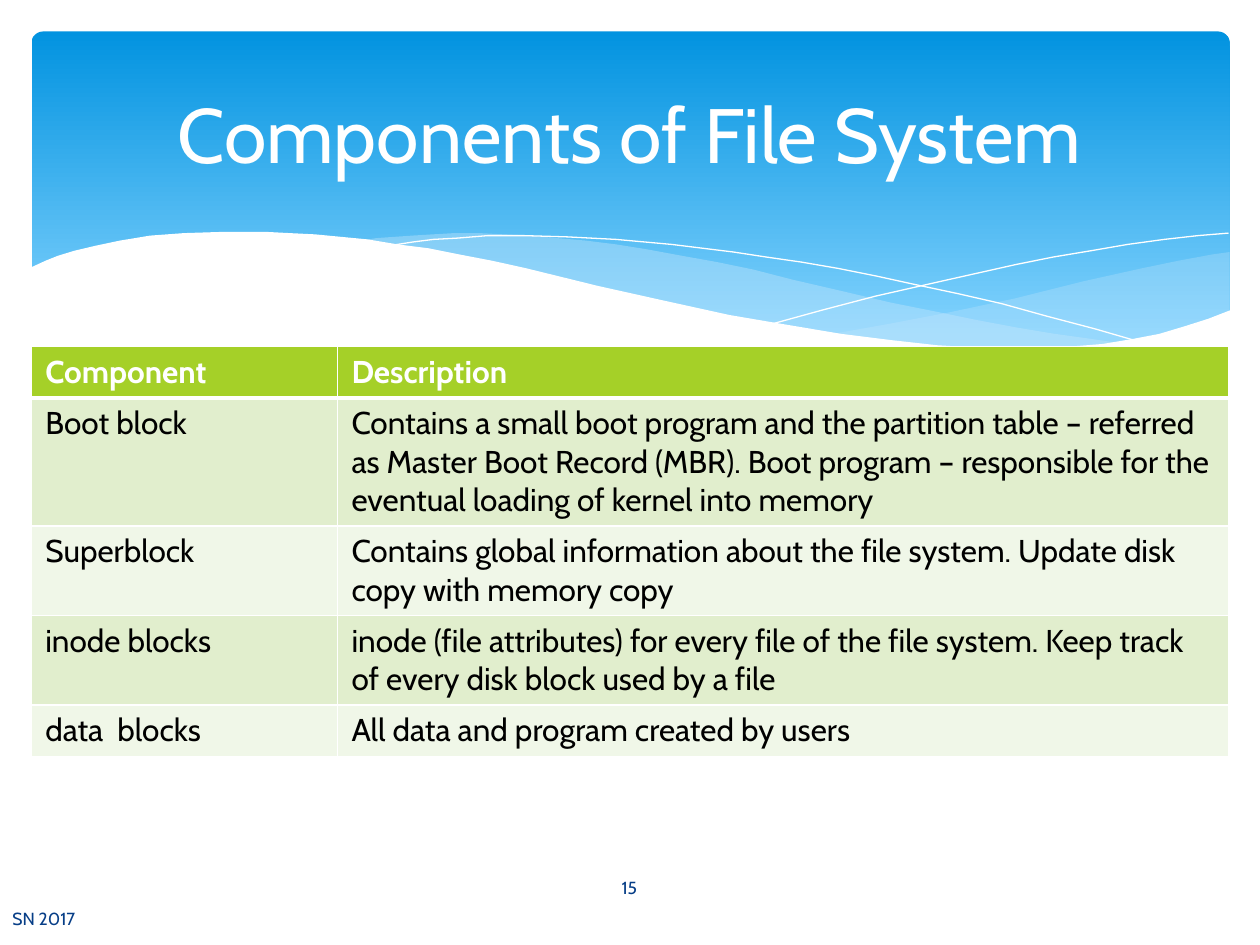
from lxml.etree import SubElement
from pptx import Presentation
from pptx.dml.color import RGBColor
from pptx.enum.shapes import MSO_SHAPE
from pptx.enum.text import MSO_ANCHOR, PP_ALIGN
from pptx.oxml import parse_xml
from pptx.oxml.ns import nsdecls, qn
from pptx.util import Inches, Pt

THEME = {
    "font": "Cabin",
    "sky_top": "0293E0", "sky_bottom": "83D3FE", "mist": "C6E7FC",
    "white": "FFFFFF", "ink": "000000", "footer": "073E87",
    "header": "A5D028", "bands": ("E1EECD", "F0F7E8"),
    "title_size": 44, "table_size": 18, "footer_size": 10,
}

TITLE = "Components of File System"
PAGE_NUMBER = "15"
FOOTER = "SN 2017"
COMPONENTS = [
    ("Component", "Description"),
    ("Boot block", "Contains a small boot program and the partition table – referred as Master "
     "Boot Record (MBR). Boot program – responsible for the eventual loading of kernel into memory"),
    ("Superblock", "Contains global information about the file system. "
     "Update disk copy with memory copy"),
    ("inode blocks", "inode (file attributes) for every file of the file system. "
     "Keep track of every disk block used by a file"),
    ("data  blocks", "All data and program created by users"),
]
COLUMN_WIDTHS = (2.43, 7.07)
ROW_HEIGHT = 0.41

RIGHT_MIST = [
    (9.76, 2), (9.62, 2.02), (9.35, 2.07), (9.06, 2.13), (8.61, 2.23), (8.05, 2.37),
    (7.53, 2.48), (7.06, 2.57), (6.61, 2.65), (6.91, 2.69), (7.19, 2.72), (7.45, 2.75),
    (7.69, 2.77), (8.03, 2.78), (8.24, 2.77), (8.54, 2.76), (8.81, 2.73), (9.05, 2.69),
    (9.28, 2.63), (9.49, 2.57), (9.63, 2.52), (9.76, 2.47),
]
MIDDLE_MIST = [
    (8.93, 2.73), (8.66, 2.69), (8.37, 2.65), (8.07, 2.6), (7.75, 2.54), (7.41, 2.47),
    (7.06, 2.4), (6.68, 2.31), (6.29, 2.22), (5.98, 2.14), (5.69, 2.08), (5.41, 2.03),
    (5.14, 1.98), (4.89, 1.94), (4.65, 1.91), (4.42, 1.89), (4.2, 1.87), (3.99, 1.86),
    (3.8, 1.85), (3.61, 1.85), (3.28, 1.87), (2.99, 1.89), (2.86, 1.91), (3.23, 1.96),
    (3.62, 2.03), (4.04, 2.11), (4.49, 2.22), (4.91, 2.32), (5.3, 2.4), (5.66, 2.48),
    (6.01, 2.55), (6.34, 2.61), (6.65, 2.66), (6.95, 2.7), (7.22, 2.74), (7.48, 2.76),
    (7.85, 2.78), (8.18, 2.78), (8.48, 2.77), (8.76, 2.75),
]
FALLING_LINE = [
    (3.09, 1.95), (3.28, 1.92), (3.44, 1.9), (3.63, 1.89), (3.87, 1.87), (4.16, 1.87),
    (4.5, 1.88), (4.89, 1.9), (5.33, 1.94), (5.82, 2), (6.08, 2.04), (6.36, 2.08),
    (6.65, 2.13), (6.95, 2.19), (7.27, 2.26), (7.6, 2.33), (7.95, 2.41), (8.31, 2.51),
    (8.69, 2.61), (9.07, 2.72),
]
RISING_LINE = [
    (6.13, 2.57), (6.53, 2.46), (6.95, 2.35), (7.48, 2.23), (8.06, 2.1), (8.36, 2.04),
    (8.66, 1.99), (8.95, 1.94), (9.24, 1.9), (9.51, 1.87), (9.75, 1.85),
]
WHITE_WAVE = [
    (9.77, 2.46), (9.59, 2.53), (9.4, 2.59), (9.2, 2.65), (8.99, 2.69), (8.75, 2.73),
    (8.5, 2.75), (8.23, 2.77), (8.09, 2.77), (7.78, 2.76), (7.44, 2.74), (7.08, 2.7),
    (6.68, 2.65), (6.26, 2.58), (5.79, 2.5), (5.29, 2.39), (4.75, 2.27), (4.18, 2.13),
    (3.91, 2.07), (3.65, 2.02), (3.4, 1.97), (3.16, 1.94), (2.92, 1.9), (2.71, 1.88),
    (2.5, 1.86), (2.3, 1.85), (2.11, 1.84), (1.77, 1.84), (1.46, 1.85), (1.19, 1.87),
    (0.95, 1.91), (0.76, 1.95), (0.59, 1.99), (0.46, 2.03), (0.36, 2.07), (0.23, 2.13),
    (0.23, 3.29), (9.77, 3.29),
]
CURVES = [
    (RIGHT_MIST, {"fill": THEME["mist"], "alpha": 29}),
    (MIDDLE_MIST, {"fill": THEME["mist"], "alpha": 40}),
    (FALLING_LINE, {"line": THEME["white"]}),
    (RISING_LINE, {"line": THEME["white"]}),
    (WHITE_WAVE, {"fill": THEME["white"]}),
]


def rgb(color):
    return RGBColor.from_string(color)


def write(frame, text, size, color, bold=False, align=PP_ALIGN.LEFT, anchor=MSO_ANCHOR.TOP):
    frame.word_wrap = True
    frame.vertical_anchor = anchor
    paragraph = frame.paragraphs[0]
    paragraph.alignment = align
    run = paragraph.add_run()
    run.text = text
    run.font.name = THEME["font"]
    run.font.size = Pt(size)
    run.font.bold = bold
    run.font.color.rgb = rgb(color)


def add_label(slide, box, text, size, color, align=PP_ALIGN.LEFT):
    label = slide.shapes.add_textbox(*map(Inches, box))
    write(label.text_frame, text, size, color, align=align, anchor=MSO_ANCHOR.MIDDLE)


def add_sky(slide):
    sky = slide.shapes.add_shape(
        MSO_SHAPE.ROUNDED_RECTANGLE, *map(Inches, (0.25, 0.25, 9.51, 2.7)))
    sky.adjustments[0] = 0.034
    sky.shadow.inherit = False
    sky.line.fill.background()
    sky.fill.gradient()
    sky.fill.gradient_angle = 270
    stops = ((0, THEME["sky_top"]), (0.9, THEME["sky_bottom"]))
    for stop, (position, color) in zip(sky.fill.gradient_stops, stops):
        stop.position = position
        stop.color.rgb = rgb(color)


def add_curve(slide, points, fill=None, alpha=100, line=None):
    start, *rest = [(Inches(x), Inches(y)) for x, y in points]
    builder = slide.shapes.build_freeform(*start)
    builder.add_line_segments(rest, close=fill is not None)
    curve = builder.convert_to_shape()
    curve.shadow.inherit = False
    if fill:
        curve.fill.solid()
        curve.fill.fore_color.rgb = rgb(fill)
        if alpha < 100:
            color = curve.fill._xPr.find(qn("a:solidFill"))[0]
            SubElement(color, qn("a:alpha"), val=str(alpha * 1000))
    else:
        curve.fill.background()
    if line:
        curve.line.color.rgb = rgb(line)
        curve.line.width = Pt(0)
    else:
        curve.line.fill.background()


def set_borders(cell, widths):
    for index, (side, width) in enumerate(widths.items()):
        cell._tc.get_or_add_tcPr().insert(index, parse_xml(
            f'<a:ln{side} {nsdecls("a")} w="{Pt(width)}"><a:solidFill>'
            f'<a:srgbClr val="{THEME["white"]}"/></a:solidFill></a:ln{side}>'))


def add_components(slide):
    table = slide.shapes.add_table(
        len(COMPONENTS), len(COLUMN_WIDTHS), Inches(0.25), Inches(2.75),
        Inches(sum(COLUMN_WIDTHS)), Inches(ROW_HEIGHT * len(COMPONENTS))).table
    table.horz_banding = False
    for column, width in zip(table.columns, COLUMN_WIDTHS):
        column.width = Inches(width)
    for r, entries in enumerate(COMPONENTS):
        table.rows[r].height = Inches(ROW_HEIGHT)
        header = r == 0
        fill = THEME["header"] if header else THEME["bands"][(r - 1) % 2]
        borders = {"L": 1, "R": 1, "T": 3 if r == 1 else 1, "B": 3 if header else 1}
        for c, entry in enumerate(entries):
            cell = table.cell(r, c)
            cell.margin_left = cell.margin_right = Inches(0.11)
            cell.margin_top = cell.margin_bottom = Inches(0.05)
            cell.fill.solid()
            cell.fill.fore_color.rgb = rgb(fill)
            set_borders(cell, borders)
            write(cell.text_frame, entry, THEME["table_size"],
                  THEME["white"] if header else THEME["ink"], bold=header)


def main():
    deck = Presentation()
    deck.slide_width, deck.slide_height = Inches(10), Inches(7.5)
    slide = deck.slides.add_slide(deck.slide_layouts[6])
    add_sky(slide)
    for points, look in CURVES:
        add_curve(slide, points, **look)
    add_components(slide)
    add_label(slide, (4.36, 6.84, 1.27, 0.4), PAGE_NUMBER, THEME["footer_size"],
              THEME["footer"], align=PP_ALIGN.CENTER)
    add_label(slide, (0.5, 0.37, 9, 1.37), TITLE, THEME["title_size"],
              THEME["white"], align=PP_ALIGN.CENTER)
    add_label(slide, (0, 7.09, 4.14, 0.4), FOOTER, THEME["footer_size"], THEME["footer"])
    deck.save("out.pptx")


if __name__ == "__main__":
    main()
